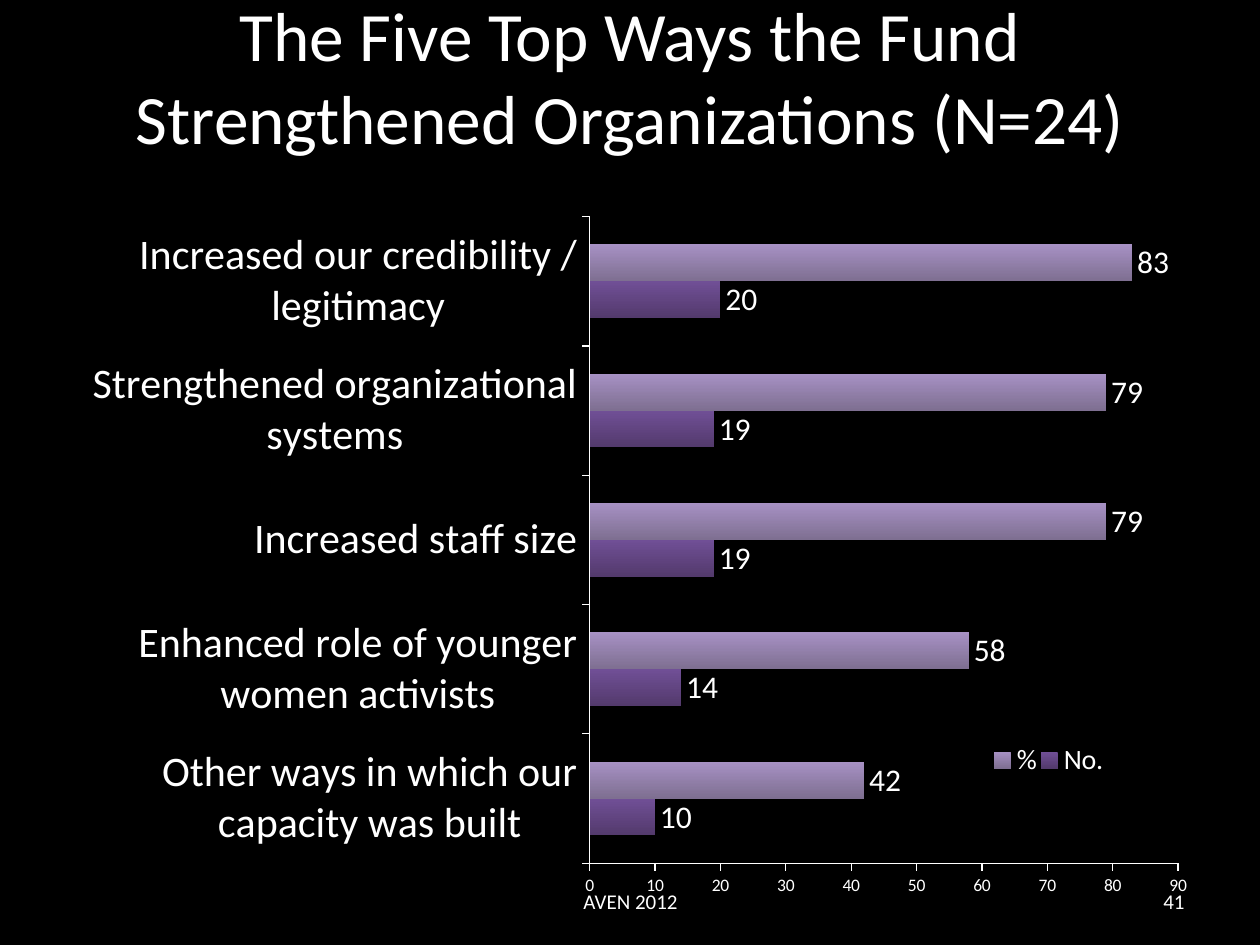
from dataclasses import dataclass

from lxml import etree
from pptx import Presentation
from pptx.chart.data import CategoryChartData
from pptx.dml.color import RGBColor
from pptx.enum.chart import XL_CHART_TYPE, XL_LABEL_POSITION, XL_LEGEND_POSITION, XL_TICK_MARK
from pptx.enum.text import MSO_ANCHOR, PP_ALIGN
from pptx.oxml.ns import qn
from pptx.util import Inches, Pt

BAR_CLUSTERED = XL_CHART_TYPE.BAR_CLUSTERED
OUTSIDE_END = XL_LABEL_POSITION.OUTSIDE_END
LEGEND_RIGHT = XL_LEGEND_POSITION.RIGHT
TICK_OUTSIDE = XL_TICK_MARK.OUTSIDE
MIDDLE = MSO_ANCHOR.MIDDLE
CENTER, RIGHT = PP_ALIGN.CENTER, PP_ALIGN.RIGHT


@dataclass(frozen=True)
class Theme:
    font: str = "Calibri"
    background: RGBColor = RGBColor(0, 0, 0)
    text: RGBColor = RGBColor(255, 255, 255)
    count_bar: tuple = ("704F96", "533A6C")
    percent_bar: tuple = ("A791C4", "7E6F91")
    title: float = 39.6
    category: int = 24
    label: int = 18
    legend: int = 16
    footer: int = 12
    scale: int = 10


theme = Theme()


def style_font(font, size):
    font.name = theme.font
    font.size = Pt(size)
    font.color.rgb = theme.text


def set_layout(parent, index, target, bounds):
    for old in parent.findall(qn("c:layout")):
        parent.remove(old)
    layout = etree.Element(qn("c:layout"))
    manual = etree.SubElement(layout, qn("c:manualLayout"))
    settings = [("layoutTarget", target)] if target else []
    settings += [("xMode", "edge"), ("yMode", "edge"), *zip("xywh", bounds)]
    for tag, value in settings:
        etree.SubElement(manual, qn("c:" + tag)).set("val", str(value))
    parent.insert(index, layout)


deck = Presentation()
deck.slide_width, deck.slide_height = Inches(10), Inches(7.5)
page = deck.slides.add_slide(deck.slide_layouts[5])
page.background.fill.solid()
page.background.fill.fore_color.rgb = theme.background

title = page.shapes.title
title.left, title.top = Inches(0.5), Inches(0.3)
title.width, title.height = Inches(9), Inches(1.25)
title.text_frame.word_wrap = True
title.text_frame.vertical_anchor = MIDDLE
title.text_frame.margin_bottom = Inches(0.71)
para = title.text_frame.paragraphs[0]
para.alignment = CENTER
span = para.add_run()
span.text = "The Five Top Ways the Fund Strengthened Organizations (N=24)"
style_font(span.font, theme.title)

data = CategoryChartData()
data.categories = [
    "Other ways in which our capacity was built",
    "Enhanced role of younger women activists",
    "Increased staff size",
    "Strengthened organizational systems",
    "Increased our credibility / legitimacy",
]
data.add_series("No.", (10, 14, 19, 19, 20))
data.add_series("%", (42, 58, 79, 79, 83))
chart = page.shapes.add_chart(
    BAR_CLUSTERED, Inches(0.29), Inches(1.55), Inches(9.34), Inches(5.64), data
).chart
chart.has_title = False
style_font(chart.font, theme.scale)
set_layout(chart.plots[0]._element.getparent(), 0, "inner", (0.47, 0.03, 0.5, 0.91))

plot = chart.plots[0]
plot.gap_width = 150
plot.overlap = 0
plot.vary_by_categories = False
for series, colors in zip(plot.series, (theme.count_bar, theme.percent_bar)):
    series.invert_if_negative = False
    fill = series.format.fill
    fill.gradient()
    fill.gradient_angle = 270
    for stop, color in zip(fill.gradient_stops, colors):
        stop.color.rgb = RGBColor.from_string(color)
    labels = series.data_labels
    labels.show_value = True
    labels.position = OUTSIDE_END
    labels.number_format = "0"
    labels.number_format_is_linked = False
    style_font(labels.font, theme.label)

for axis, size in ((chart.category_axis, theme.category), (chart.value_axis, theme.scale)):
    axis.has_major_gridlines = False
    axis.major_tick_mark = TICK_OUTSIDE
    axis.format.line.color.rgb = theme.text
    axis.format.line.width = Pt(0.75)
    style_font(axis.tick_labels.font, size)
chart.value_axis.minimum_scale = 0
chart.value_axis.maximum_scale = 90
chart.value_axis.major_unit = 10

chart.has_legend = True
legend = chart.legend
legend.position = LEGEND_RIGHT
legend.include_in_layout = False
style_font(legend.font, theme.legend)
set_layout(legend._element, 1, None, (0.81, 0.73, 0.1, 0.13))

for text, left, width, alignment in (
    ("AVEN 2012", 3.42, 3.17, CENTER),
    ("41", 7.17, 2.33, RIGHT),
):
    box = page.shapes.add_textbox(Inches(left), Inches(6.95), Inches(width), Inches(0.4))
    box.text_frame.word_wrap = True
    box.text_frame.vertical_anchor = MIDDLE
    para = box.text_frame.paragraphs[0]
    para.alignment = alignment
    span = para.add_run()
    span.text = text
    style_font(span.font, theme.footer)

deck.save("out.pptx")
